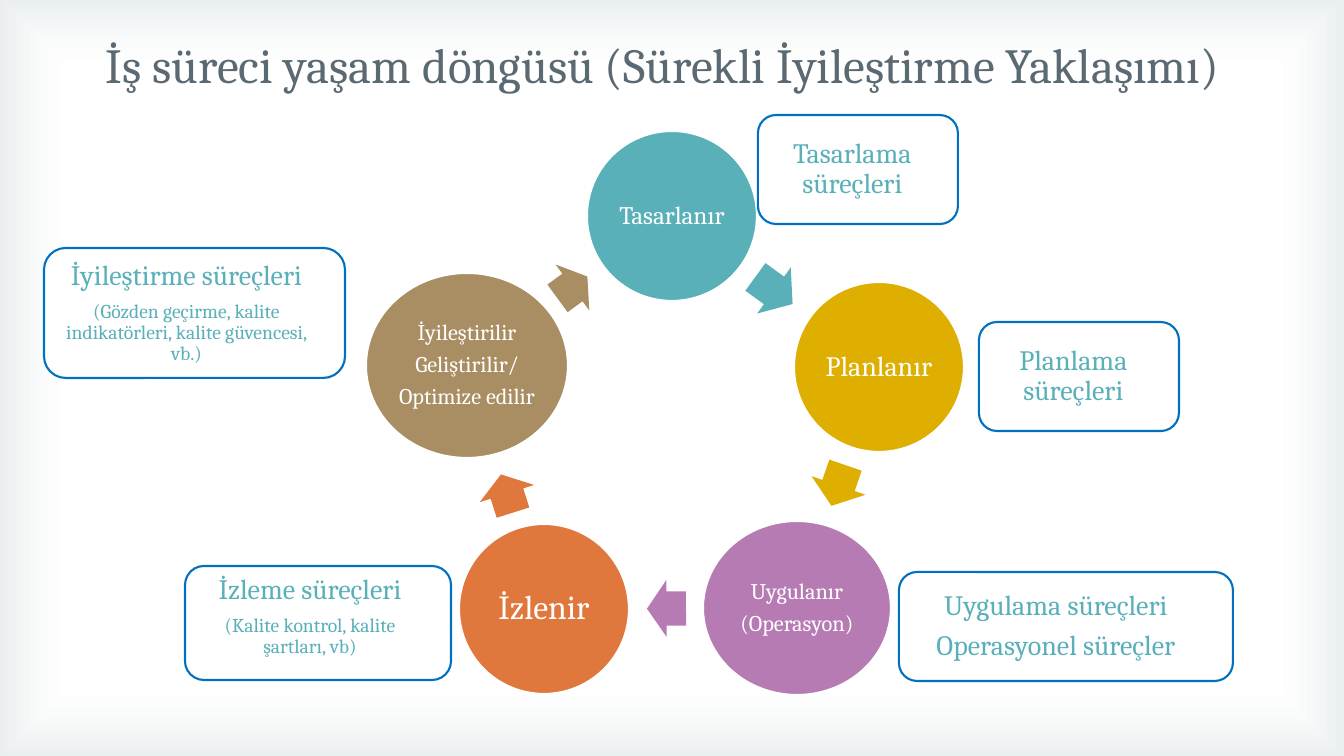
from dataclasses import dataclass

from lxml import etree
from pptx import Presentation
from pptx.dml.color import RGBColor
from pptx.enum.shapes import MSO_SHAPE as Shape
from pptx.enum.text import MSO_ANCHOR as Anchor, MSO_AUTO_SIZE as AutoSize, PP_ALIGN as Align
from pptx.oxml.ns import qn
from pptx.util import Emu, Pt

WIDTH, HEIGHT = 1344, 756
EMU_PER_PX = 12192000 / WIDTH
FONT = "Cambria"

WHITE = RGBColor(0xFF, 0xFF, 0xFF)
SLATE = RGBColor(0x5B, 0x69, 0x73)
MIST = RGBColor(0xA4, 0xB7, 0xBB)
BLUE = RGBColor(0x00, 0x70, 0xC0)
TEAL = RGBColor(0x59, 0xB0, 0xB9)
GOLD = RGBColor(0xDE, 0xAE, 0x00)
PURPLE = RGBColor(0xB7, 0x7B, 0xB4)
ORANGE = RGBColor(0xE0, 0x77, 0x3C)
BROWN = RGBColor(0xA9, 0x8D, 0x63)

Box = tuple[int, int, int, int]
Lines = list[tuple[str, int]]


@dataclass
class Stage:
    color: RGBColor
    circle: Box
    lines: Lines
    arrow: Box
    angle: float


@dataclass
class Card:
    box: Box
    lines: Lines
    right: int
    bottom: int = 4


STAGES = [
    Stage(TEAL, (587, 131, 170, 170), [("Tasarlanır", 18)], (751, 262, 46, 57), 36.1),
    Stage(GOLD, (794, 282, 170, 170), [("Planlanır", 20)], (817, 457, 43, 57), 109),
    Stage(PURPLE, (703, 521, 188, 174), [("Uygulanır", 16), ("(Operasyon)", 16)],
          (647, 580, 39, 57), 179.6),
    Stage(ORANGE, (459, 524, 170, 170), [("İzlenir", 24)], (487, 465, 40, 57), 252.5),
    Stage(BROWN, (366, 273, 202, 185),
          [("İyileştirilir", 16), ("Geliştirilir/", 16), ("Optimize edilir", 16)],
          (554, 259, 37, 57), 323.8),
]

CARDS = [
    Card((758, 115, 200, 109), [("Tasarlama süreçleri", 20)], 16),
    Card((979, 322, 200, 109), [("Planlama süreçleri", 20)], 16),
    Card((899, 572, 334, 109), [("Uygulama süreçleri", 20), ("Operasyonel süreçler", 20)], 25),
    Card((185, 566, 266, 114),
         [("İzleme süreçleri", 20), ("(Kalite kontrol, kalite şartları, vb)", 14)], 21, 17),
    Card((44, 248, 301, 130),
         [("İyileştirme süreçleri", 20),
          ("(Gözden geçirme, kalite indikatörleri, kalite güvencesi, vb.)", 14)], 21),
]


def px(n: int) -> Emu:
    return Emu(round(n * EMU_PER_PX))


def add_shape(s, kind: Shape, box: Box, fill: RGBColor, line: RGBColor | None = None):
    sp = s.shapes.add_shape(kind, *map(px, box))
    sp.shadow.inherit = False
    sp.fill.solid()
    sp.fill.fore_color.rgb = fill
    if line is None:
        sp.line.fill.background()
    else:
        sp.line.color.rgb = line
        sp.line.width = Pt(1.5)
    return sp


def write(sp, lines: Lines, color: RGBColor, insets: Box) -> None:
    """Fill the shape with centred paragraphs; insets are left, top, right, bottom."""
    tf = sp.text_frame
    tf.word_wrap = True
    tf.vertical_anchor = Anchor.MIDDLE
    tf.margin_left, tf.margin_top, tf.margin_right, tf.margin_bottom = map(px, insets)
    for i, (text, size) in enumerate(lines):
        p = tf.add_paragraph() if i else tf.paragraphs[0]
        p.text = text
        p.alignment = Align.CENTER
        p.line_spacing = 0.9
        p.space_after = Pt(round(0.35 * size, 1))
        p.font.name = FONT
        p.font.size = Pt(size)
        p.font.color.rgb = color


def add_vignette(s) -> None:
    """Lay a translucent gradient behind everything, darker towards the edges."""
    sp = add_shape(s, Shape.RECTANGLE, (0, 0, WIDTH, HEIGHT), WHITE)
    solid = sp.element.spPr.find(qn("a:solidFill"))
    grad = etree.Element(qn("a:gradFill"), rotWithShape="1")
    stops = etree.SubElement(grad, qn("a:gsLst"))
    for pos, color, alpha in ((83, WHITE, 11), (100, MIST, 23)):
        stop = etree.SubElement(stops, qn("a:gs"), pos=str(pos * 1000))
        clr = etree.SubElement(stop, qn("a:srgbClr"), val=str(color))
        etree.SubElement(clr, qn("a:alpha"), val=str(alpha * 1000))
    shade = etree.SubElement(grad, qn("a:path"), {"path": "rect"})
    etree.SubElement(shade, qn("a:fillToRect"), dict.fromkeys("ltrb", "50000"))
    sp.element.spPr.replace(solid, grad)
    s.shapes.element.insert(2, sp.element)


def set_title(s, text: str) -> None:
    sp = s.shapes.title
    sp.left, sp.top, sp.width, sp.height = map(px, (3, 29, 1320, 116))
    tf = sp.text_frame
    tf.word_wrap = True
    tf.auto_size = AutoSize.NONE
    tf.vertical_anchor = Anchor.TOP
    p = tf.paragraphs[0]
    p.text = text
    p.alignment = Align.CENTER
    p.font.name = FONT
    p.font.size = Pt(35)
    p.font.color.rgb = SLATE


def add_stage(s, stage: Stage) -> None:
    circle = add_shape(s, Shape.OVAL, stage.circle, stage.color, WHITE)
    write(circle, stage.lines, WHITE, (2, 2, 2, 2))
    arrow = add_shape(s, Shape.RIGHT_ARROW, stage.arrow, stage.color)
    arrow.adjustments[0] = 0.6
    arrow.adjustments[1] = 0.5
    arrow.rotation = stage.angle


def add_card(s, card: Card) -> None:
    sp = add_shape(s, Shape.ROUNDED_RECTANGLE, card.box, WHITE, BLUE)
    write(sp, card.lines, TEAL, (5, 4, card.right, card.bottom))


def main() -> None:
    prs = Presentation()
    prs.slide_width, prs.slide_height = px(WIDTH), px(HEIGHT)
    s = prs.slides.add_slide(prs.slide_layouts.get_by_name("Title Only"))
    add_vignette(s)
    set_title(s, "İş süreci yaşam döngüsü (Sürekli İyileştirme Yaklaşımı)")
    for stage in STAGES:
        add_stage(s, stage)
    for card in CARDS:
        add_card(s, card)
    prs.save("out.pptx")


if __name__ == "__main__":
    main()
